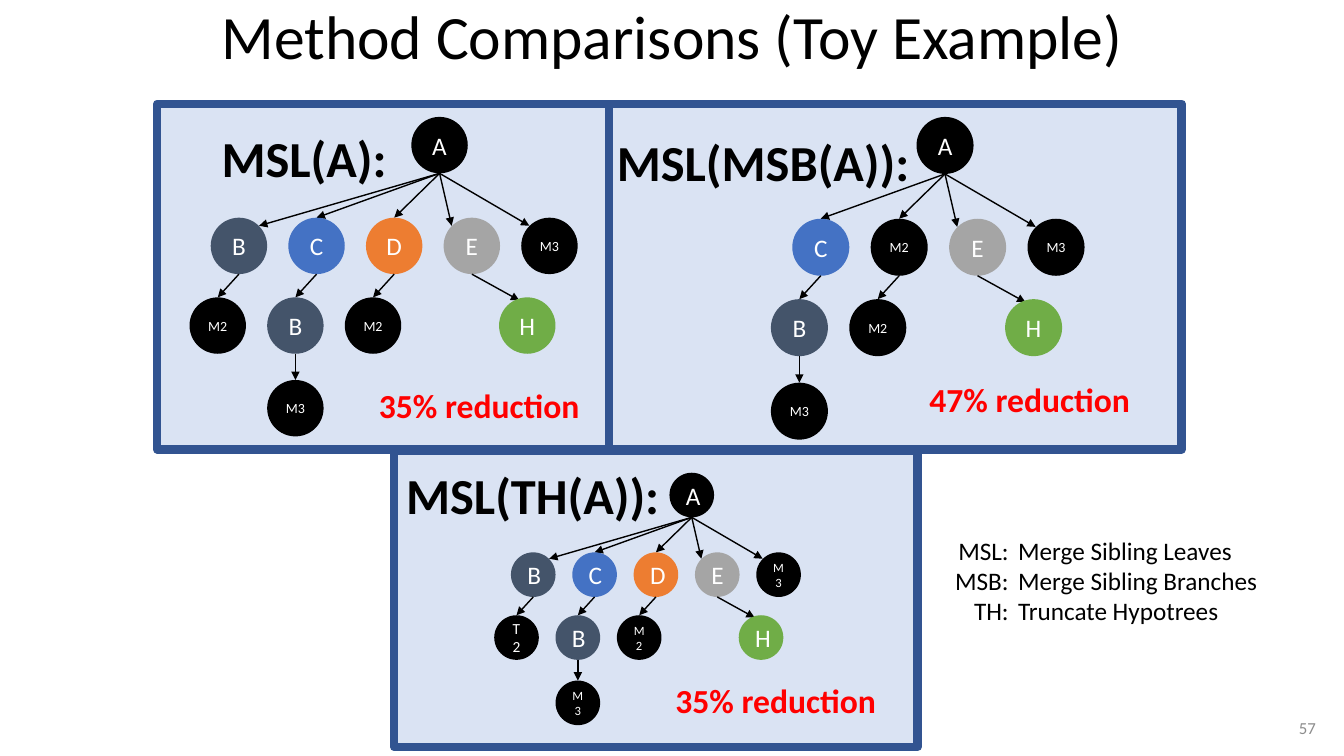
from lxml.etree import SubElement
from pptx import Presentation
from pptx.dml.color import RGBColor
from pptx.enum.shapes import MSO_CONNECTOR as CONN, MSO_SHAPE as SHAPE
from pptx.enum.text import MSO_ANCHOR as ANCHOR, PP_ALIGN as ALIGN
from pptx.oxml.ns import qn
from pptx.util import Inches, Pt


def rgb(code):
    return RGBColor.from_string(code)


class TreeSlide:
    """Style, current slide and drawing methods for labelled tree panels."""

    FONT = "Calibri"
    NODE = 0.56
    STEP = 0.77
    FIRST = -1.99
    ROWS = (0, 1, 1.79, 2.61)
    FILLS = {"B": "44546A", "C": "4472C4", "D": "ED7D31", "E": "A5A5A5", "H": "70AD47"}
    PORTS = {"top": (0.28, 0), "left": (0.08, 0.08), "right": (0.48, 0.08), "H": (0.2, 0.03)}
    ROOT_PORTS = ("right", "top", "top", "left", "left")

    def __init__(self, prs):
        self.s = prs.slides.add_slide(prs.slide_layouts[6])
        self.shapes = self.s.shapes

    def fill_text(self, tf, lines, size, color, align, spacing=None, **fmt):
        fmt = {"name": self.FONT, "size": Pt(size), **fmt}
        for i, line in enumerate(lines):
            p = tf.add_paragraph() if i else tf.paragraphs[0]
            p.alignment, p.line_spacing = align, spacing
            r = p.add_run()
            r.text = line
            for key, value in fmt.items():
                setattr(r.font, key, value)
            r.font.color.rgb = rgb(color)

    def text(self, box, *lines, size=18, color="000000", align=ALIGN.LEFT,
             anchor=ANCHOR.TOP, wrap=True, **fmt):
        tf = self.shapes.add_textbox(*map(Inches, box)).text_frame
        tf.word_wrap, tf.vertical_anchor = wrap, anchor
        self.fill_text(tf, lines, size, color, align, **fmt)

    def shape(self, kind, box, fill):
        sp = self.shapes.add_shape(kind, *map(Inches, box))
        sp.shadow.inherit = False
        sp.fill.solid()
        sp.fill.fore_color.rgb = rgb(fill)
        sp.line.fill.background()
        return sp

    def panel(self, *box):
        sp = self.shape(SHAPE.RECTANGLE, box, "DAE3F3")
        sp.line.color.rgb = rgb("325491")
        sp.line.width = Pt(6)

    def node(self, label, x, y, d, size):
        sp = self.shape(SHAPE.OVAL, (x, y, d, d), self.FILLS.get(label, "000000"))
        tf = sp.text_frame
        tf.word_wrap, tf.vertical_anchor = True, ANCHOR.MIDDLE
        self.fill_text(tf, [label], size, "FFFFFF", ALIGN.CENTER)

    def arrow(self, *ends):
        c = self.shapes.add_connector(CONN.STRAIGHT, *map(Inches, ends))
        c.line.color.rgb = rgb("000000")
        c.line.width = Pt(1)
        SubElement(c.line._ln, qn("a:tailEnd"), type="triangle")
        SubElement(c._element.spPr, qn("a:effectLst"))

    def tree(self, left, top, scale, branches, sizes):
        """Draw root A and one chain of nodes under each sibling slot."""
        self.shapes = self.s.shapes.add_group_shape().shapes

        def place(label, x, row):
            self.node(label, left + scale * x, top + scale * self.ROWS[row],
                      scale * self.NODE, sizes.get(label, 18))

        for slot, (chain, port) in enumerate(zip(branches, self.ROOT_PORTS)):
            parent, x = 0, self.FIRST + slot * self.STEP
            for row, label in enumerate(chain.split(), 1):
                if row == 2:
                    x += 0.55 if label == "H" else -0.21
                entry = port if row == 1 else "H" if label == "H" else "top"
                dx, dy = self.PORTS[entry]
                self.arrow(left + scale * (parent + self.NODE / 2),
                           top + scale * (self.ROWS[row - 1] + self.NODE),
                           left + scale * (x + dx), top + scale * (self.ROWS[row] + dy))
                place(label, x, row)
                parent = x
        place("A", 0, 0)
        self.shapes = self.s.shapes


def main():
    prs = Presentation()
    prs.slide_width, prs.slide_height = Inches(13.33), Inches(7.5)
    s = TreeSlide(prs)

    s.panel(3.91, 4.47, 5.19, 2.94)
    s.panel(6.03, 1.03, 5.69, 3.43)
    s.panel(1.56, 1.03, 4.48, 3.43)
    s.text((0.92, 0.01, 11.5, 1.45), "Method Comparisons (Toy Example)",
           size=44, align=ALIGN.CENTER, spacing=0.9)

    small = {"M2": 10, "M3": 10}
    s.tree(4.08, 1.16, 1, ("B M2", "C B M3", "D M2", "E H", "M3"), small)
    s.tree(9.09, 1.16, 1.01, ("", "C B M3", "M2 M2", "E H", "M3"), small)
    s.tree(6.64, 4.69, 0.79, ("B T2", "C B M3", "D M2", "E H", "M3"),
           {"M2": 9, "M3": 9, "T2": 11})

    for name, x, y, w in (("MSL(A):", 2.1, 1.21, 1.86),
                          ("MSL(MSB(A)):", 6.02, 1.25, 3.13),
                          ("MSL(TH(A)):", 3.93, 4.55, 2.74)):
        s.text((x, y, w, 0.71), name, size=36, bold=True, wrap=False)
    for share, x, y in ((35, 3.66, 3.77), (47, 9.12, 3.71), (35, 6.6, 6.7)):
        s.text((x, y, 2.21, 0.5), f"{share}% reduction", size=24,
               color="FF0000", bold=True, wrap=False)

    s.text((10, 5.26, 3.24, 1.01), "Merge Sibling Leaves",
           "Merge Sibling Branches", "Truncate Hypotrees")
    s.text((9.1, 5.26, 1.06, 1.01), "MSL: ", "MSB: ", "TH: ", align=ALIGN.RIGHT)
    s.text((10.15, 7.02, 3, 0.4), "57", size=12, color="8C8C8C",
           align=ALIGN.RIGHT, anchor=ANCHOR.MIDDLE)
    prs.save("out.pptx")


if __name__ == "__main__":
    main()
